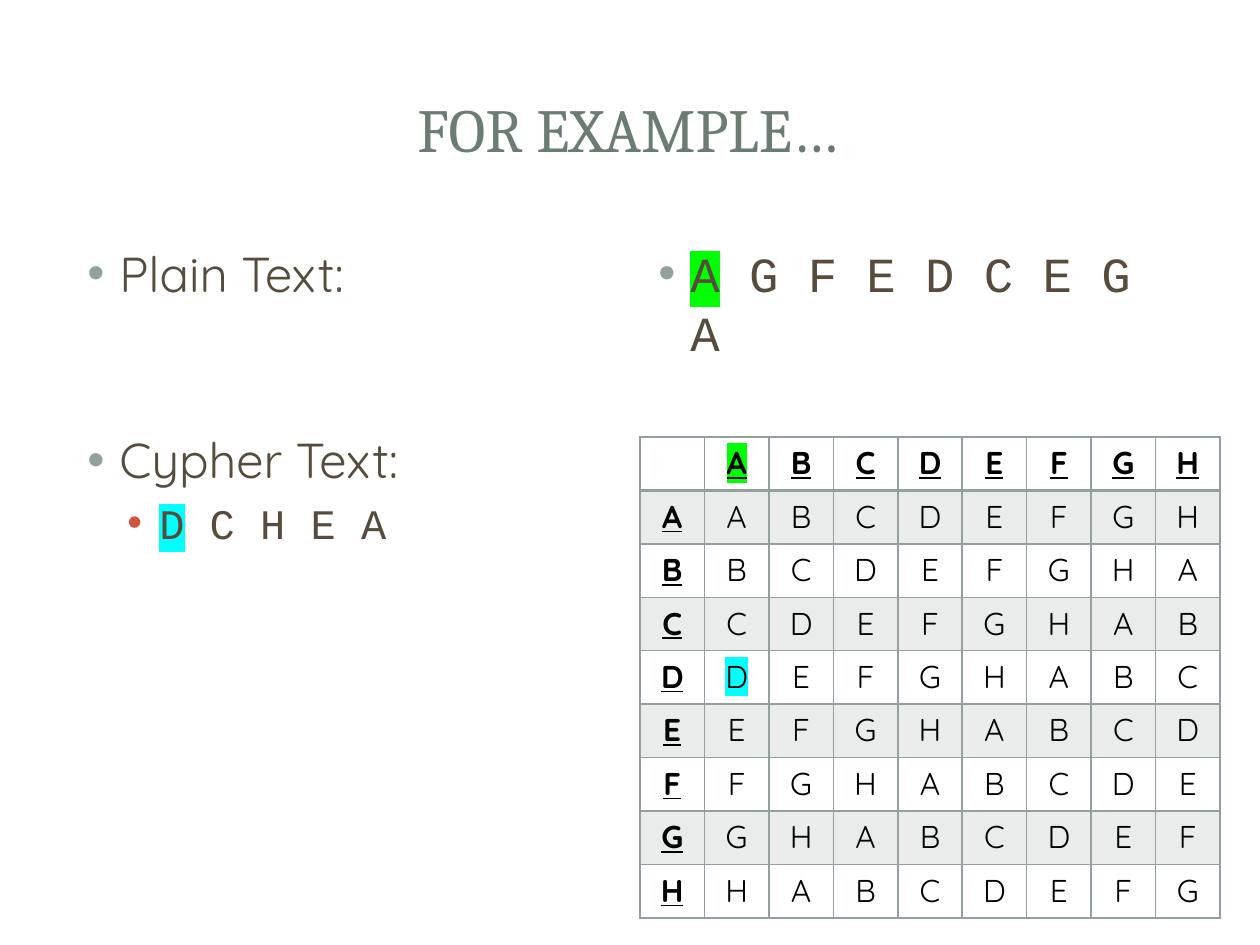
from dataclasses import dataclass

from lxml.etree import SubElement
from pptx import Presentation
from pptx.dml.color import RGBColor
from pptx.enum.shapes import MSO_SHAPE as Preset
from pptx.enum.text import MSO_ANCHOR as Anchor, PP_ALIGN as Align
from pptx.oxml.ns import qn
from pptx.util import Emu, Pt

PX = 914400 / 126
LETTERS = "ABCDEFGH"


@dataclass(frozen=True)
class Theme:
    heading: str = "Cambria"
    body: str = "Quicksand"
    code: str = "Courier New"
    bullet: str = "Arial"
    title_ink: str = "6B7D72"
    ink: str = "564B3C"
    black: str = "000000"
    white: str = "FFFFFF"
    sage: str = "93A299"
    red: str = "CF543F"
    green: str = "00FF00"
    cyan: str = "00FFFF"
    title_size: int = 35
    text_size: int = 28
    sub_size: int = 24
    cell_size: int = 18


THEME = Theme()


def px(length):
    return Emu(round(length * PX))


def place(box):
    return [px(length) for length in box]


def style(para, font, size, color, strong=False):
    para.font.name = font
    para.font.size = Pt(size)
    para.font.color.rgb = RGBColor.from_string(color)
    para.font.bold = strong
    para.font.underline = strong


def add_color(parent, tag, color):
    node = SubElement(parent, qn(tag))
    return SubElement(node, qn("a:srgbClr"), val=color)


def set_alpha(color, percent):
    SubElement(color, qn("a:alpha"), val=str(percent * 1000))


def add_span(para, text, highlight=None):
    span = para.add_run()
    span.text = text
    if highlight:
        add_color(span.font._element, "a:highlight", highlight)


def add_bullet(para, indent, color):
    props = para._p.get_or_add_pPr()
    props.set("marL", str(px(indent)))
    props.set("indent", str(px(-32)))
    parts = [
        add_color(props, "a:buClr", color).getparent(),
        SubElement(props, qn("a:buFont"), typeface=THEME.bullet),
        SubElement(props, qn("a:buChar"), char="•"),
    ]
    defaults = props.find(qn("a:defRPr"))
    for part in parts:
        defaults.addprevious(part)


def add_panel(page, preset, box, opacity=100):
    panel = page.shapes.add_shape(preset, *place(box))
    panel.shadow.inherit = False
    panel.line.fill.background()
    panel.fill.solid()
    panel.fill.fore_color.rgb = RGBColor.from_string(THEME.white)
    if opacity < 100:
        fill = panel._element.spPr.find(qn("a:solidFill"))
        set_alpha(fill.find(qn("a:srgbClr")), opacity)
    return panel


def add_frame(page, box):
    left, top, width, height = box
    card = add_panel(page, Preset.ROUNDED_RECTANGLE, box)
    card.adjustments[0] = 0.017
    add_panel(page, Preset.RECTANGLE, (left + 25, top + 24, width - 50, 183), 83)
    add_panel(page, Preset.RECTANGLE, (left + 39, top + 38, width - 79, 154))


def add_title(page, box, text):
    title = page.shapes.title
    page.shapes._spTree.append(title._element)
    title.left, title.top, title.width, title.height = place(box)
    frame = title.text_frame
    frame.vertical_anchor = Anchor.MIDDLE
    frame.text = text
    para = frame.paragraphs[0]
    para.alignment = Align.CENTER
    style(para, THEME.heading, THEME.title_size, THEME.title_ink)


def add_bullets(page, box, items):
    frame = page.shapes.add_textbox(*place(box)).text_frame
    frame.word_wrap = True
    for index, (spans, font, level, gap) in enumerate(items):
        para = frame.add_paragraph() if index else frame.paragraphs[0]
        para.level = level
        para.space_before = Pt(gap)
        size = THEME.sub_size if level else THEME.text_size
        style(para, font, size, THEME.ink)
        add_bullet(para, 88 if level else 48, THEME.red if level else THEME.sage)
        for text, highlight in spans:
            add_span(para, text, highlight)


def add_borders(cell, widths):
    props = cell._tc.get_or_add_tcPr()
    for side, width in widths.items():
        line = SubElement(props, qn(f"a:ln{side}"), w=str(Pt(width)))
        add_color(line, "a:solidFill", THEME.sage)


def fill_cell(cell, shaded):
    if not shaded:
        cell.fill.background()
        return
    cell.fill.solid()
    cell.fill.fore_color.rgb = RGBColor.from_string(THEME.sage)
    set_alpha(cell._tc.tcPr.find(qn("a:solidFill")).find(qn("a:srgbClr")), 20)


def cell_text(row, col):
    if row and col:
        return LETTERS[(row + col - 2) % len(LETTERS)]
    return LETTERS[row + col - 1] if row + col else ""


def add_cipher_square(page, box, highlights):
    count = len(LETTERS) + 1
    table = page.shapes.add_table(count, count, *place(box)).table
    table.first_row = table.horz_banding = False
    for column in table.columns:
        column.width = px(box[2] / count)
    for row in range(count):
        table.rows[row].height = px(box[3] / count)
        for col in range(count):
            cell = table.cell(row, col)
            add_borders(cell, {"L": 1, "R": 1, "T": 2 if row == 1 else 1,
                               "B": 1 if row else 2})
            fill_cell(cell, row % 2 == 1)
            para = cell.text_frame.paragraphs[0]
            para.alignment = Align.CENTER
            style(para, THEME.body, THEME.cell_size, THEME.black, not (row and col))
            if row or col:
                add_span(para, cell_text(row, col), highlights.get((row, col)))


def build_example(deck):
    page = deck.slides.add_slide(deck.slide_layouts[5])
    add_frame(page, (13, 14, 1235, 919))
    add_title(page, (59, 56, 1138, 144), "FOR EXAMPLE…")
    add_bullets(page, (59, 237, 557, 607), [
        ([("Plain Text:", None)], THEME.body, 0, 5),
        ([("Cypher Text:", None)], THEME.body, 0, 73),
        ([("D", THEME.cyan), (" C H E A", None)], THEME.code, 1, 5),
    ])
    add_cipher_square(page, (640, 437, 580, 481),
                      {(0, 1): THEME.green, (4, 1): THEME.cyan})
    add_bullets(page, (630, 237, 557, 222), [
        ([("A", THEME.green), (" G F E D C E G A", None)], THEME.code, 0, 5),
    ])


def main():
    deck = Presentation()
    deck.slide_width, deck.slide_height = px(1260), px(945)
    build_example(deck)
    deck.save("out.pptx")


if __name__ == "__main__":
    main()
